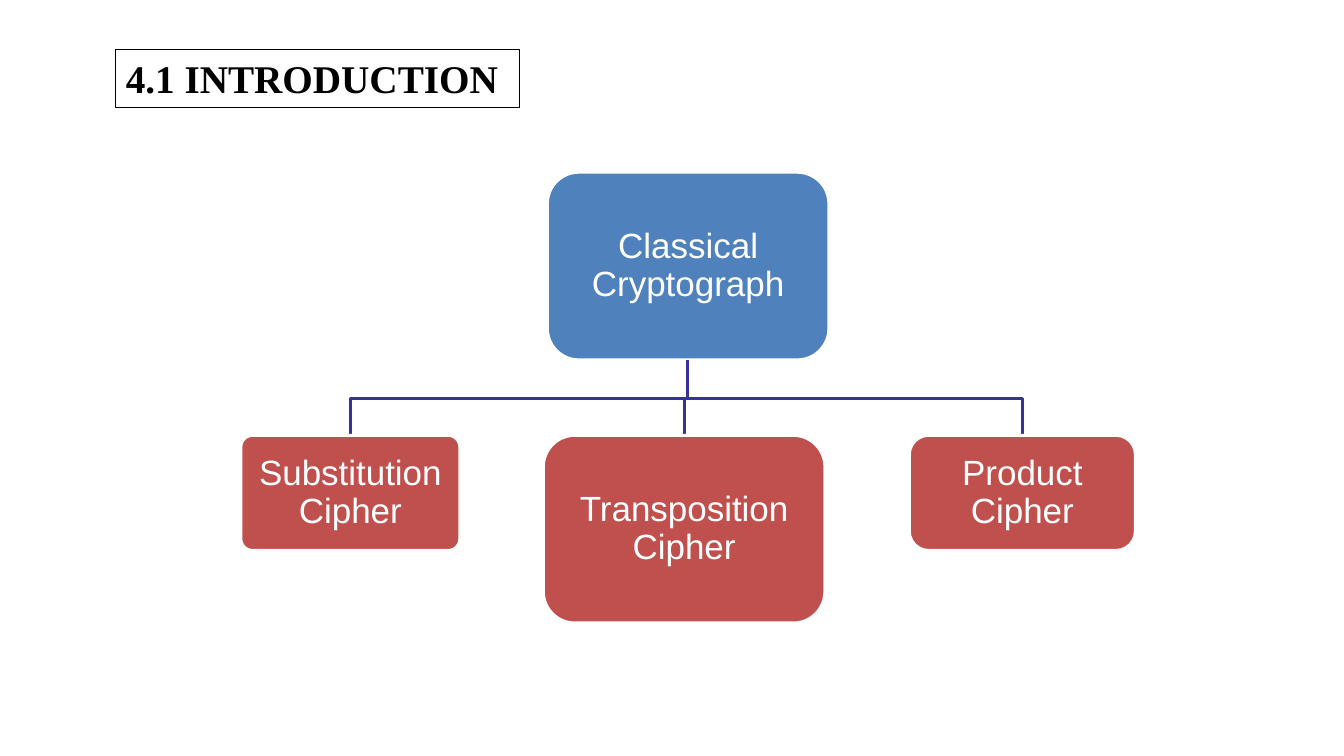
"""Build the introduction slide with the tree of classical ciphers."""
from pptx import Presentation
from pptx.dml.color import RGBColor
from pptx.enum.shapes import MSO_SHAPE
from pptx.enum.text import MSO_ANCHOR, PP_ALIGN
from pptx.util import Inches, Pt


def color(hex_code):
    return RGBColor.from_string(hex_code)


def write(shape, text, size, font, ink, bold=False, align=PP_ALIGN.LEFT,
          anchor=MSO_ANCHOR.TOP, spacing=1.0, inset=0.05):
    frame = shape.text_frame
    frame.word_wrap = True
    frame.vertical_anchor = anchor
    frame.margin_left = frame.margin_right = Inches(0.1)
    frame.margin_top = frame.margin_bottom = Inches(inset)
    paragraph = frame.paragraphs[0]
    paragraph.alignment = align
    paragraph.line_spacing = spacing
    run = paragraph.add_run()
    run.text = text
    run.font.size = Pt(size)
    run.font.name = font
    run.font.bold = bold
    run.font.color.rgb = color(ink)


prs = Presentation()
prs.slide_width, prs.slide_height = Inches(13.33), Inches(7.5)
slide = prs.slides.add_slide(prs.slide_layouts[6])

heading = slide.shapes.add_textbox(Inches(1.15), Inches(0.49), Inches(4), Inches(0.58))
heading.line.color.rgb = color("000000")
heading.line.width = Pt(0.75)
write(heading, "4.1 INTRODUCTION", 28, "Times New Roman", "000000", bold=True)

ROOT_X, ROOT_BOTTOM, BRANCH_Y, CHILD_TOP = 6.82, 3.57, 3.95, 4.32
ciphers = [
    ("Classical Cryptograph", 5.43, 1.71, 2.79, 1.86, 0.167, "4F81BD"),
    ("Substitution Cipher", 2.39, CHILD_TOP, 2.17, 1.14, 0.1, "C0504D"),
    ("Transposition Cipher", 5.39, CHILD_TOP, 2.79, 1.86, 0.167, "C0504D"),
    ("Product Cipher", 9.02, CHILD_TOP, 2.24, 1.14, 0.167, "C0504D"),
]

for name, left, top, width, height, rounding, fill in ciphers:
    if top == CHILD_TOP:
        child_x = left + width / 2
        bends = [(ROOT_X, BRANCH_Y), (child_x, BRANCH_Y), (child_x, CHILD_TOP)]
        builder = slide.shapes.build_freeform(Inches(ROOT_X), Inches(ROOT_BOTTOM))
        builder.add_line_segments([(Inches(x), Inches(y)) for x, y in bends], close=False)
        branch = builder.convert_to_shape()
        branch.shadow.inherit = False
        branch.fill.background()
        branch.line.color.rgb = color("333399")
        branch.line.width = Pt(2)

    box = slide.shapes.add_shape(MSO_SHAPE.ROUNDED_RECTANGLE, Inches(left), Inches(top),
                                 Inches(width), Inches(height))
    box.adjustments[0] = rounding
    box.shadow.inherit = False
    box.fill.solid()
    box.fill.fore_color.rgb = color(fill)
    box.line.color.rgb = color("FFFFFF")
    box.line.width = Pt(2)
    write(box, name, 25, "Arial", "FFFFFF", align=PP_ALIGN.CENTER,
          anchor=MSO_ANCHOR.MIDDLE, spacing=0.9, inset=0.1)

prs.save("out.pptx")
